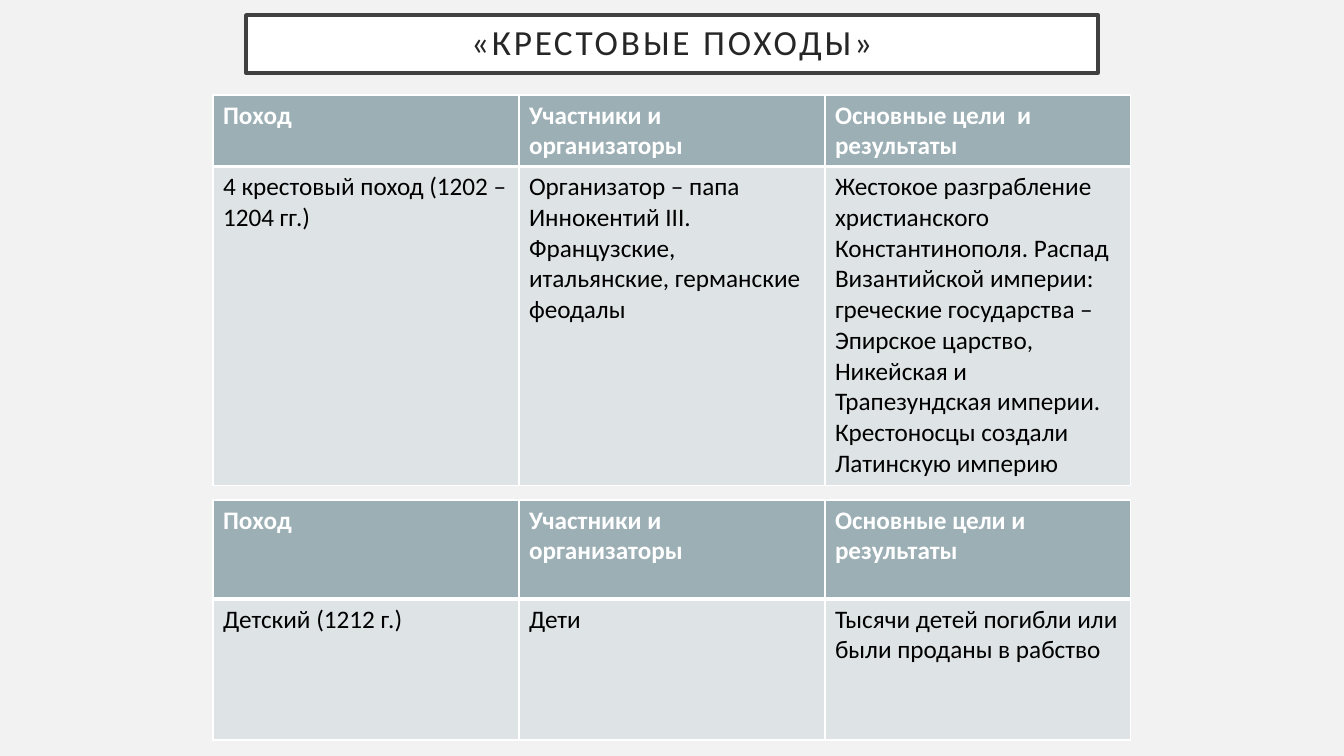
from lxml import etree
from pptx import Presentation
from pptx.dml.color import RGBColor
from pptx.enum.shapes import MSO_SHAPE as Shape
from pptx.enum.text import MSO_ANCHOR as Anchor, PP_ALIGN as Align
from pptx.oxml.ns import qn
from pptx.util import Pt

PX = 9144000 / 1008


def px(length):
    return round(length * PX)


def color(value):
    return RGBColor.from_string(value)


def write(frame, text, size=18, ink="000000", bold=False, align=Align.LEFT, leading=1.0, spacing=0):
    frame.word_wrap = True
    paragraph = frame.paragraphs[0]
    paragraph.alignment = align
    paragraph.line_spacing = leading
    run = paragraph.add_run()
    run.text = text
    run.font.name = "Calibri"
    run.font.size = Pt(size)
    run.font.bold = bold
    run.font.color.rgb = color(ink)
    if spacing:
        run.font._element.set("spc", str(spacing * 100))


def border(cell, side, width):
    line = etree.SubElement(cell._tc.get_or_add_tcPr(), qn(f"a:ln{side}"), w=str(Pt(width)))
    fill = etree.SubElement(line, qn("a:solidFill"))
    etree.SubElement(fill, qn("a:srgbClr"), val="FFFFFF")


deck = Presentation()
deck.slide_width, deck.slide_height = px(1344), px(756)
slide = deck.slides.add_slide(deck.slide_layouts[6])
slide.background.fill.solid()
slide.background.fill.fore_color.rgb = color("F2F2F2")

title = slide.shapes.add_shape(Shape.RECTANGLE, px(246), px(15), px(852), px(58))
title.shadow.inherit = False
title.fill.solid()
title.fill.fore_color.rgb = color("FFFFFF")
title.line.color.rgb = color("404040")
title.line.width = Pt(2.5)
heading = title.text_frame
heading.vertical_anchor = Anchor.MIDDLE
heading.margin_left = heading.margin_right = heading.margin_top = heading.margin_bottom = px(20)
write(heading, "«КРЕСТОВЫЕ ПОХОДЫ»", size=25.2, ink="262626", align=Align.CENTER, leading=0.9, spacing=2)

crusades = [
    (95, (71, 319), [
        ("Поход", "Участники и организаторы", "Основные цели  и результаты"),
        ("4 крестовый поход (1202 – 1204 гг.)",
         "Организатор – папа Иннокентий III. Французские, итальянские, германские феодалы",
         "Жестокое разграбление христианского Константинополя. Распад Византийской империи: "
         "греческие государства – Эпирское царство, Никейская и Трапезундская империи. "
         "Крестоносцы создали Латинскую империю"),
    ]),
    (500, (99, 141), [
        ("Поход", "Участники и организаторы", "Основные цели и результаты"),
        ("Детский (1212 г.)", "Дети", "Тысячи детей погибли или были проданы в рабство"),
    ]),
]
row_styles = [
    ("9BAFB5", "FFFFFF", True, {"L": 1, "R": 1, "T": 1, "B": 3}),
    ("DEE3E5", "000000", False, {"L": 1, "R": 1, "T": 3, "B": 1}),
]

for top, heights, rows in crusades:
    table = slide.shapes.add_table(2, 3, px(213), px(top), px(918), px(sum(heights))).table
    for column in table.columns:
        column.width = px(306)
    for row, height, texts, style in zip(table.rows, heights, rows, row_styles):
        row.height = px(height)
        background, ink, bold, borders = style
        for cell, text in zip(row.cells, texts):
            for side, width in borders.items():
                border(cell, side, width)
            cell.fill.solid()
            cell.fill.fore_color.rgb = color(background)
            write(cell.text_frame, text, ink=ink, bold=bold)

deck.save("out.pptx")
